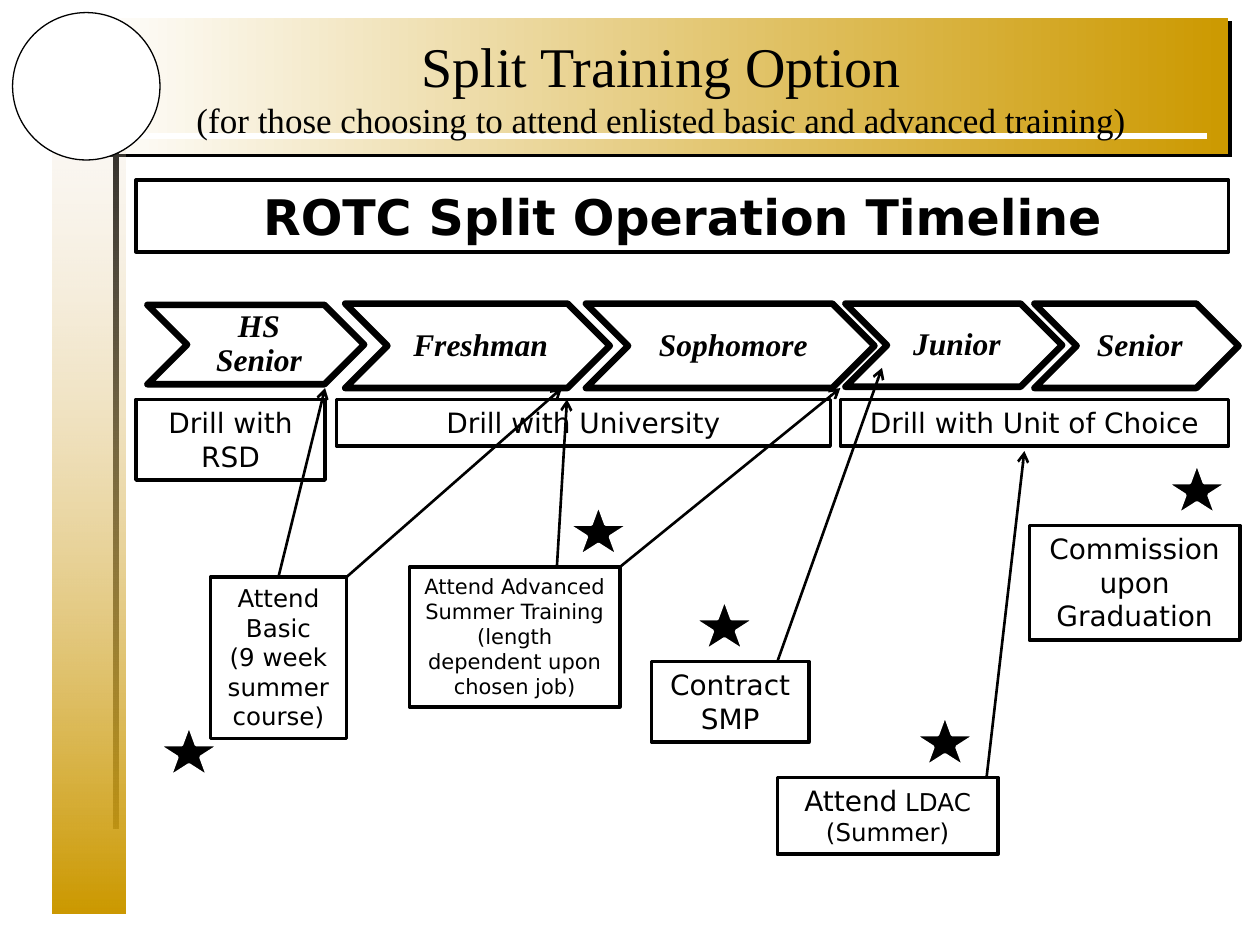
from lxml import etree
from pptx import Presentation
from pptx.dml.color import RGBColor
from pptx.enum.shapes import MSO_CONNECTOR, MSO_SHAPE
from pptx.enum.text import MSO_ANCHOR, MSO_AUTO_SIZE, PP_ALIGN
from pptx.oxml.ns import qn
from pptx.util import Inches, Pt

RECT, OVAL = MSO_SHAPE.RECTANGLE, MSO_SHAPE.OVAL
CHEVRON, STAR = MSO_SHAPE.CHEVRON, MSO_SHAPE.STAR_5_POINT
STRAIGHT = MSO_CONNECTOR.STRAIGHT
CENTER = PP_ALIGN.CENTER
TOP, MIDDLE = MSO_ANCHOR.TOP, MSO_ANCHOR.MIDDLE
FIT_SHAPE, NO_FIT = MSO_AUTO_SIZE.SHAPE_TO_FIT_TEXT, MSO_AUTO_SIZE.NONE

BLACK = RGBColor(0x00, 0x00, 0x00)
WHITE = RGBColor(0xFF, 0xFF, 0xFF)
GOLD = RGBColor(0xCC, 0x99, 0x00)
IVORY = RGBColor(0xFE, 0xFD, 0xFB)
SAND = RGBColor(0xEF, 0xE2, 0xD4)
SERIF, SANS = "Times New Roman", "DejaVu Sans"

# Left, top, width, height, label
STAGES = [
    (1.17, 2.42, 1.72, 0.63, "HS Senior"),
    (2.74, 2.41, 2.10, 0.67, "Freshman"),
    (4.65, 2.41, 2.29, 0.67, "Sophomore"),
    (6.71, 2.41, 1.72, 0.66, "Junior"),
    (8.21, 2.41, 1.62, 0.67, "Senior"),
]
# Box, then paragraphs of (text, size) runs
HEADING = (1.08, 1.43, 8.67, 0.57), [[("ROTC Split Operation Timeline", 28)]]
DRILLS = [
    ((1.08, 3.17, 1.5, 0.64), [[("Drill with RSD", 16)]]),
    ((2.67, 3.17, 3.92, 0.37), [[("Drill with University", 16)]]),
    ((6.67, 3.17, 3.08, 0.37), [[("Drill with Unit of Choice", 16)]]),
]
MILESTONES = [
    ((1.67, 4.58, 1.08, 1.28),
     [[("Attend Basic", 14)], [("(9 week summer course)", 14)]]),
    ((3.25, 4.5, 1.67, 1.11),
     [[("Attend Advanced Summer Training (length dependent upon chosen job)", 12)]]),
    ((5.17, 5.25, 1.25, 0.64), [[("Contract SMP", 16)]]),
    ((6.17, 6.17, 1.75, 0.61),
     [[("Attend", 16), (" LDAC", 14)], [("(Summer)", 14)]]),
    ((8.17, 4.17, 1.67, 0.91), [[("Commission upon Graduation", 16)]]),
]
STARS = [(1.25, 5.75), (4.5, 4), (5.5, 4.75), (7.25, 5.67), (9.25, 3.67)]
ARROWS = [
    (2.21, 4.58, 2.58, 3.08),
    (2.75, 4.58, 4.46, 3.08),
    (4.42, 4.5, 4.5, 3.17),
    (4.92, 4.5, 6.67, 3.08),
    (6.17, 5.25, 7, 2.92),
    (7.83, 6.17, 8.13, 3.58),
]


def set_all(obj, **values):
    for name, value in values.items():
        setattr(obj, name, value)


def inches(box):
    return [Inches(v) for v in box]


def add_shape(s, kind, box, fill=None, line=None, width=1):
    sp = s.shapes.add_shape(kind, *inches(box))
    sp.shadow.inherit = False
    if fill is None:
        sp.fill.background()
    else:
        sp.fill.solid()
        sp.fill.fore_color.rgb = fill
    if line is None:
        sp.line.fill.background()
    else:
        sp.line.color.rgb = line
        sp.line.width = Pt(width)
    return sp


def add_line(s, ends, color, width, arrow=False):
    line = s.shapes.add_connector(STRAIGHT, *inches(ends))
    line.line.color.rgb = color
    line.line.width = Pt(width)
    if arrow:
        etree.SubElement(line.line._get_or_add_ln(), qn("a:tailEnd"), type="arrow")
    etree.SubElement(line._element.spPr, qn("a:effectLst"))


def add_run(p, text, size, font, **style):
    r = p.add_run()
    r.text = text
    set_all(r.font, size=Pt(size), name=font, **style)
    r.font.color.rgb = BLACK


def set_gradient(sp, start, end, angle):
    sp.fill.gradient()
    sp.fill.gradient_angle = angle
    for stop, color, position in zip(sp.fill.gradient_stops, (start, end), (0, 1)):
        stop.color.rgb = color
        stop.position = position


def add_frame(s):
    """Gold title band, fading side bar, rules and the round emblem."""
    band = add_shape(s, RECT, (0.83, 0.14, 8.92, 1.08))
    set_gradient(band, IVORY, GOLD, 0)
    effects = band._element.spPr.find(qn("a:effectLst"))
    shadow = etree.SubElement(effects, qn("a:outerShdw"), dist=str(Pt(2.8)),
                              dir="2700000", algn="ctr", rotWithShape="0")
    etree.SubElement(shadow, qn("a:srgbClr"), val=str(BLACK))

    add_line(s, (0.92, 6.58, 0.92, 1), BLACK, 3)
    bar = add_shape(s, RECT, (0.42, 0.83, 0.58, 6.42))
    set_gradient(bar, SAND, GOLD, 270)
    first = next(bar._element.iter(qn("a:srgbClr")))
    etree.SubElement(first, qn("a:alpha"), val="19000")

    add_line(s, (1.08, 1.08, 9.58, 1.08), WHITE, 3)
    add_shape(s, OVAL, (0.1, 0.1, 1.17, 1.17), WHITE, BLACK, 0.75)


def add_title(s, box):
    title = s.shapes.title
    left, top, width, height = inches(box)
    set_all(title, left=left, top=top, width=width, height=height)
    tf = title.text_frame
    set_all(tf, vertical_anchor=TOP, auto_size=NO_FIT, word_wrap=True,
            margin_top=Inches(0.08))
    p = tf.paragraphs[0]
    p.alignment = CENTER
    add_run(p, "Split Training Option", 32, SERIF)
    p.add_line_break()
    add_run(p, "(for those choosing to attend enlisted basic and advanced training)",
            20, SERIF)
    s.shapes._spTree.append(title._element)  # in front of the band


def add_stage(s, left, top, width, height, label):
    """Chevron with its label set between the notch and the point."""
    add_shape(s, CHEVRON, (left, top, width, height), line=BLACK, width=3.75)
    inset = height / 2
    box = (left + inset, top, width - 2 * inset, height)
    tf = s.shapes.add_textbox(*inches(box)).text_frame
    small = Inches(0.03)
    set_all(tf, word_wrap=True, vertical_anchor=MIDDLE, margin_left=Inches(0.08),
            margin_top=small, margin_right=small, margin_bottom=small)
    p = tf.paragraphs[0]
    set_all(p, alignment=CENTER, line_spacing=0.9)
    add_run(p, label, 18, SERIF, bold=True, italic=True)


def add_box(s, box, paragraphs, bold=False):
    sp = add_shape(s, RECT, box, line=BLACK, width=2)
    tf = sp.text_frame
    set_all(tf, word_wrap=True, auto_size=FIT_SHAPE, vertical_anchor=TOP)
    for i, runs in enumerate(paragraphs):
        p = tf.add_paragraph() if i else tf.paragraphs[0]
        p.alignment = CENTER
        for text, size in runs:
            add_run(p, text, size, SANS, bold=bold)


def add_timeline(s):
    for stage in STAGES:
        add_stage(s, *stage)
    add_box(s, *HEADING, bold=True)
    for box, paragraphs in DRILLS + MILESTONES:
        add_box(s, box, paragraphs)
    for left, top in STARS:
        add_shape(s, STAR, (left, top, 0.5, 0.42), BLACK, WHITE, 2)
    for ends in ARROWS:
        add_line(s, ends, BLACK, 1.5, arrow=True)


def main():
    prs = Presentation()
    prs.slide_width, prs.slide_height = Inches(10), Inches(7.5)
    s = prs.slides.add_slide(prs.slide_layouts[5])
    add_frame(s)
    add_title(s, (1, 0.17, 8.5, 1.25))
    add_timeline(s)
    prs.save("out.pptx")


if __name__ == "__main__":
    main()
